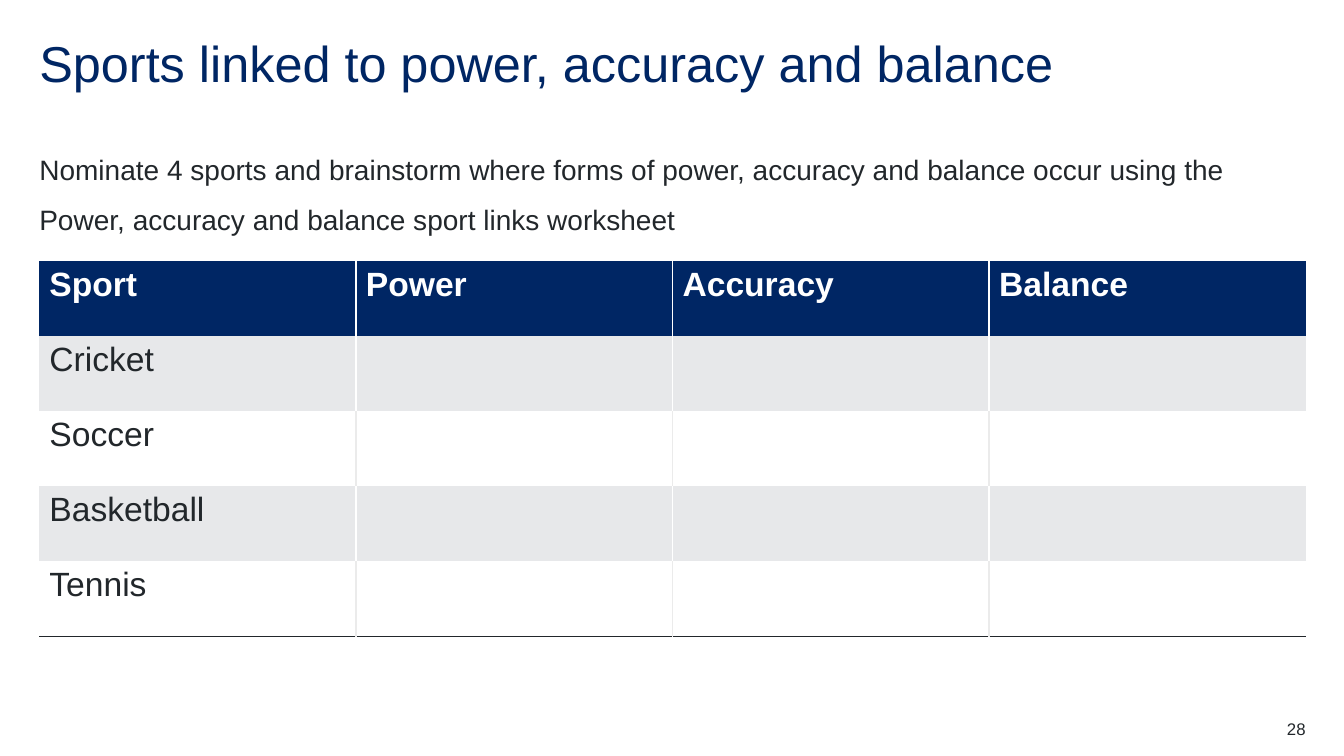
from dataclasses import dataclass
from typing import Optional

from lxml.etree import SubElement
from pptx import Presentation
from pptx.dml.color import RGBColor
from pptx.enum.text import MSO_ANCHOR, MSO_AUTO_SIZE, PP_ALIGN
from pptx.oxml.ns import qn
from pptx.slide import Slide
from pptx.table import _Cell
from pptx.text.text import TextFrame, _Paragraph
from pptx.util import Inches, Pt

NAVY = RGBColor(0x00, 0x26, 0x64)
INK = RGBColor(0x22, 0x27, 0x2B)
WHITE = RGBColor(0xFF, 0xFF, 0xFF)
BAND = RGBColor(0xE7, 0xE8, 0xEA)
DIVIDER = RGBColor(0xEB, 0xEB, 0xEB)

FONT = "Arial"
MARGIN = 0.39
COLUMN = 12.56 / 4
ROW = 3.72 / 5

HEADINGS = ("Sport", "Power", "Accuracy", "Balance")
SPORTS = ("Cricket", "Soccer", "Basketball", "Tennis")


@dataclass(frozen=True)
class Area:
    column: float
    row: float
    columns: float
    rows: float

    def box(self) -> tuple[int, int, int, int]:
        return (
            Inches(MARGIN + self.column * COLUMN),
            Inches(MARGIN + self.row * ROW),
            Inches(self.columns * COLUMN),
            Inches(self.rows * ROW),
        )


@dataclass(frozen=True)
class Passage:
    text: str
    area: Area
    size: int
    color: RGBColor = INK
    line_spacing: float = 1.0
    space_after: int = 0
    align: PP_ALIGN = PP_ALIGN.LEFT


@dataclass(frozen=True)
class RowLook:
    fill: RGBColor
    color: RGBColor
    divider: RGBColor
    bold: bool = False
    rule: Optional[RGBColor] = None


TITLE = Passage("Sports linked to power, accuracy and balance",
                Area(0, 0, 4, 0.81), 36, NAVY, line_spacing=0.9)
TASK = Passage("Nominate 4 sports and brainstorm where forms of power, accuracy and "
               "balance occur using the Power, accuracy and balance sport links worksheet",
               Area(0, 1.28, 4, 1.32), 20, line_spacing=1.5, space_after=12)
PAGE_NUMBER = Passage("28", Area(3.75, 9.06, 0.25, 0.27), 12, align=PP_ALIGN.RIGHT)
SPORTS_AREA = Area(0, 2.96, 4, 5)

HEADER_LOOK = RowLook(NAVY, WHITE, WHITE, bold=True)
BAND_LOOK = RowLook(BAND, INK, WHITE)
PLAIN_LOOK = RowLook(WHITE, INK, DIVIDER)
LAST_LOOK = RowLook(WHITE, INK, DIVIDER, rule=INK)
LOOKS = (HEADER_LOOK, BAND_LOOK, PLAIN_LOOK, BAND_LOOK, LAST_LOOK)


def add_run(paragraph: _Paragraph, text: str, size: int, color: RGBColor,
            bold: bool = False) -> None:
    run = paragraph.add_run()
    run.text = text
    run.font.name = FONT
    run.font.size = Pt(size)
    run.font.bold = bold
    run.font.color.rgb = color


def write_passage(frame: TextFrame, passage: Passage) -> None:
    frame.word_wrap = True
    frame.auto_size = MSO_AUTO_SIZE.NONE
    frame.vertical_anchor = MSO_ANCHOR.TOP
    frame.margin_left = frame.margin_right = frame.margin_top = frame.margin_bottom = 0
    paragraph = frame.paragraphs[0]
    paragraph.alignment = passage.align
    paragraph.line_spacing = passage.line_spacing
    paragraph.space_before = Pt(0)
    paragraph.space_after = Pt(passage.space_after)
    add_run(paragraph, passage.text, passage.size, passage.color)


def add_title(slide: Slide, passage: Passage) -> None:
    title = slide.shapes.title
    title.left, title.top, title.width, title.height = passage.area.box()
    write_passage(title.text_frame, passage)


def add_passage(slide: Slide, passage: Passage) -> None:
    write_passage(slide.shapes.add_textbox(*passage.area.box()).text_frame, passage)


def set_borders(cell: _Cell, left: Optional[RGBColor], right: Optional[RGBColor],
                bottom: Optional[RGBColor]) -> None:
    properties = cell._tc.get_or_add_tcPr()
    edges = (("a:lnL", left), ("a:lnR", right), ("a:lnT", None), ("a:lnB", bottom))
    for tag, color in edges:
        line = SubElement(properties, qn(tag), w=str(Pt(1)))
        if color is None:
            SubElement(line, qn("a:noFill"))
        else:
            solid = SubElement(line, qn("a:solidFill"))
            SubElement(solid, qn("a:srgbClr"), val=str(color))


def add_sports_table(slide: Slide) -> None:
    entries = [HEADINGS] + [(sport, "", "", "") for sport in SPORTS]
    last = len(HEADINGS) - 1
    table = slide.shapes.add_table(len(entries), len(HEADINGS), *SPORTS_AREA.box()).table
    table.first_row = False
    table.horz_banding = False
    for row, (entry, look) in enumerate(zip(entries, LOOKS)):
        for column, text in enumerate(entry):
            cell = table.cell(row, column)
            set_borders(cell,
                        look.divider if column > 0 else None,
                        look.divider if column < last else None,
                        look.rule)
            cell.fill.solid()
            cell.fill.fore_color.rgb = look.fill
            if text:
                add_run(cell.text_frame.paragraphs[0], text, 24, look.color, look.bold)


def main() -> None:
    deck = Presentation()
    deck.slide_width, deck.slide_height = Inches(13.33), Inches(7.5)
    slide = deck.slides.add_slide(deck.slide_layouts[5])
    add_title(slide, TITLE)
    add_passage(slide, TASK)
    add_sports_table(slide)
    add_passage(slide, PAGE_NUMBER)
    deck.save("out.pptx")


if __name__ == "__main__":
    main()
